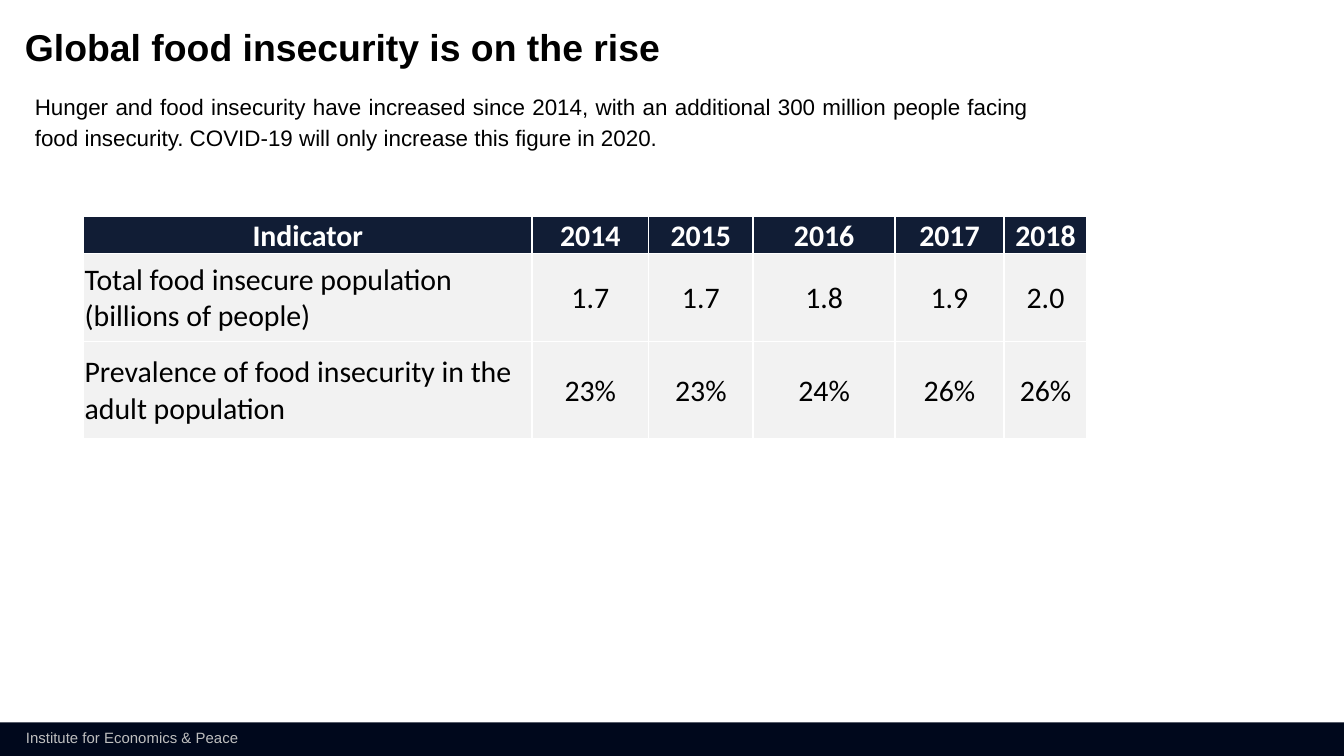
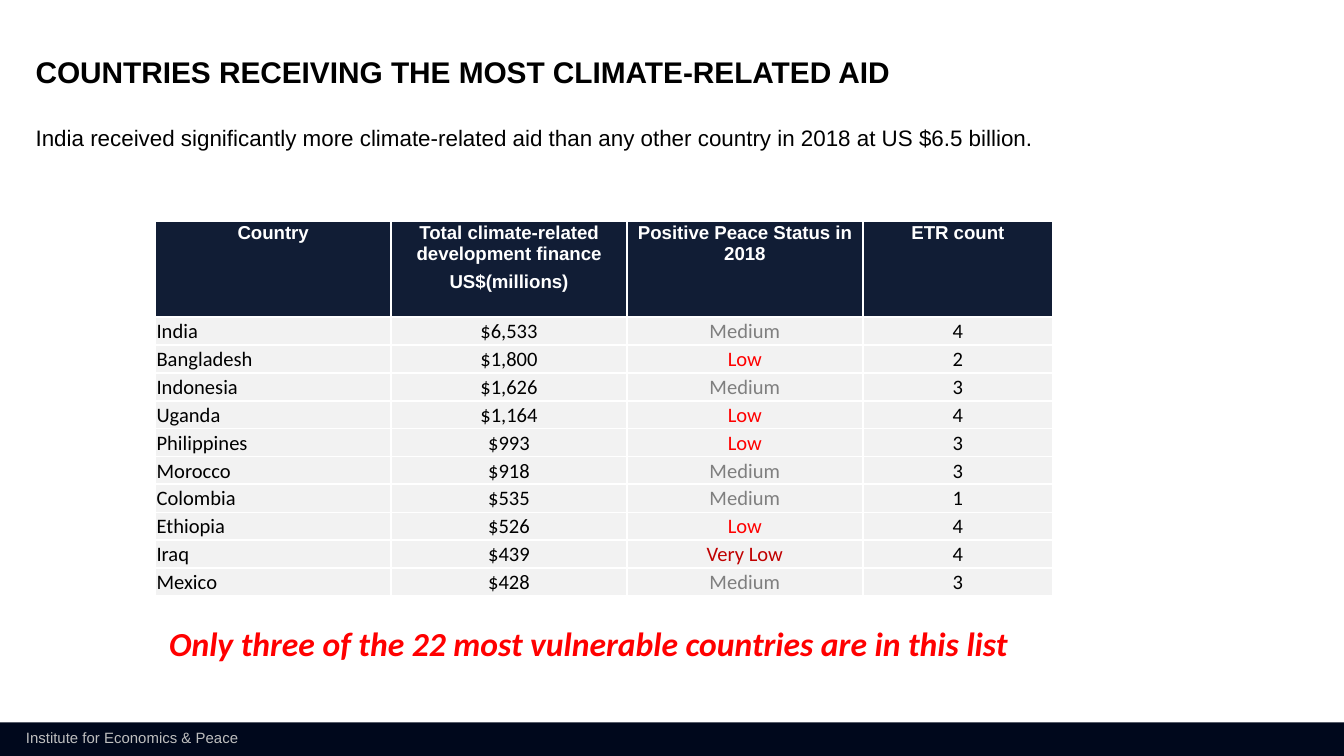
from dataclasses import dataclass

from lxml.etree import SubElement as Sub
from pptx import Presentation
from pptx.dml.color import RGBColor as Rgb
from pptx.enum.shapes import MSO_SHAPE as Form
from pptx.enum.text import MSO_ANCHOR as Anchor, PP_ALIGN as Align
from pptx.oxml.ns import qn
from pptx.slide import Slide
from pptx.table import _Cell as Cell
from pptx.text.text import TextFrame as Frame
from pptx.util import Emu, Pt

SCALE = 4572
WIDE, HIGH = 2000, 1125
BLACK, WHITE, RED = "000000", "FFFFFF", "FF0000"
NAVY, BAND, PALE, SILVER = "111D35", "00081C", "F2F2F2", "BFBFBF"
TONES = {"Medium": "7F7F7F", "Low": RED, "Very Low": "C00000"}
SIDES = ("lnL", "lnR", "lnT", "lnB")


@dataclass(frozen=True)
class Box:
    left: int
    top: int
    width: int
    height: int


@dataclass(frozen=True)
class Style:
    size: int
    face: str = "Arial"
    tone: str = BLACK
    bold: bool = False
    slant: bool = False
    align: Align = Align.LEFT
    lead: float = 1.0
    after: int = 0


@dataclass(frozen=True)
class Label:
    text: str
    box: Box
    style: Style
    pads: tuple[int, int] = (0, 0)
    wrap: bool = True


@dataclass(frozen=True)
class Grid:
    left: int
    top: int
    cols: list[int]
    rows: list[int]
    data: list[list[str]]
    head: Style
    size: int
    heads: int = 1


FOOT = Label("Institute for Economics & Peace", Box(19, 1074, 360, 48),
             Style(8, tone=SILVER), (20, 10), False)


def px(count: int) -> Emu:
    return Emu(count * SCALE)


def rgb(code: str) -> Rgb:
    return Rgb.from_string(code)


def area(box: Box) -> tuple[Emu, ...]:
    return px(box.left), px(box.top), px(box.width), px(box.height)


def write(frame: Frame, text: str, style: Style) -> None:
    frame.text = text
    para = frame.paragraphs[0]
    para.alignment = style.align
    para.line_spacing = style.lead
    para.space_after = Pt(style.after)
    font = para.font
    font.size, font.name = Pt(style.size), style.face
    font.bold, font.italic = style.bold, style.slant
    font.color.rgb = rgb(style.tone)


def fit(frame: Frame, label: Label) -> None:
    side, edge = label.pads
    frame.margin_left = frame.margin_right = px(side)
    frame.margin_top = frame.margin_bottom = px(edge)
    frame.word_wrap = label.wrap
    frame.vertical_anchor = Anchor.TOP
    write(frame, label.text, label.style)


def put(slide: Slide, label: Label) -> None:
    fit(slide.shapes.add_textbox(*area(label.box)).text_frame, label)


def name(slide: Slide, label: Label) -> None:
    title = slide.shapes.title
    title.left, title.top, title.width, title.height = area(label.box)
    fit(title.text_frame, label)


def rule(cell: Cell, gap: str) -> None:
    props = cell._tc.get_or_add_tcPr()
    for side in SIDES:
        line = Sub(props, qn(f"a:{side}"), w=str(Pt(1)))
        if side == gap:
            Sub(line, qn("a:noFill"))
        else:
            fill = Sub(line, qn("a:solidFill"))
            Sub(fill, qn("a:srgbClr"), val=WHITE)


def look(grid: Grid, row: int, col: int) -> Style:
    if row < grid.heads:
        return grid.head
    tone = TONES.get(grid.data[row][col], BLACK)
    return Style(grid.size, "Calibri", tone, align=Align.CENTER if col else Align.LEFT)


def draw(slide: Slide, grid: Grid) -> None:
    box = Box(grid.left, grid.top, sum(grid.cols), sum(grid.rows))
    table = slide.shapes.add_table(len(grid.rows), len(grid.cols), *area(box)).table
    table.first_row = table.horz_banding = False
    for col, width in zip(table.columns, grid.cols):
        col.width = px(width)
    for row, height in zip(table.rows, grid.rows):
        row.height = px(height)
    last = grid.heads - 1
    for col in range(len(grid.cols)):
        if last and not grid.data[last][col]:
            table.cell(0, col).merge(table.cell(last, col))
    for row, line in enumerate(grid.data):
        for col, text in enumerate(line):
            cell = table.cell(row, col)
            head = row < grid.heads
            cell.margin_left = cell.margin_right = cell.margin_top = px(2)
            cell.margin_bottom = 0
            cell.vertical_anchor = Anchor.TOP if head and last else Anchor.MIDDLE
            split = head and last and not (cell.is_merge_origin or cell.is_spanned)
            rule(cell, ("lnT" if row else "lnB") if split else "")
            cell.fill.solid()
            cell.fill.fore_color.rgb = rgb(NAVY if head else PALE)
            write(cell.text_frame, text, look(grid, row, col))


def start(deck: Presentation, title: Label) -> Slide:
    slide = deck.slides.add_slide(deck.slide_layouts[5])
    band = slide.shapes.add_shape(Form.RECTANGLE, *area(Box(0, 1075, WIDE, 50)))
    band.shadow.inherit = False
    band.fill.solid()
    band.fill.fore_color.rgb = rgb(BAND)
    band.line.fill.background()
    put(slide, FOOT)
    name(slide, title)
    return slide


def hunger(deck: Presentation) -> None:
    slide = start(deck, Label("Global food insecurity is on the rise",
                              Box(37, 44, 1496, 60), Style(20, bold=True, lead=0.9)))
    data = [
        ["Indicator", "2014", "2015", "2016", "2017", "2018"],
        ["Total food insecure population (billions of people)",
         "1.7", "1.7", "1.8", "1.9", "2.0"],
        ["Prevalence of food insecurity in the adult population",
         "23%", "23%", "24%", "26%", "26%"],
    ]
    head = Style(16, "Calibri", WHITE, True, align=Align.CENTER)
    cols = [668, 173, 156, 211, 162, 124]
    draw(slide, Grid(124, 322, cols, [54, 131, 145], data, head, 16))
    put(slide, Label(
        "Hunger and food insecurity have increased since 2014, with an additional "
        "300 million people facing food insecurity. COVID-19 will only increase "
        "this figure in 2020.",
        Box(36, 125, 1512, 104), Style(12, align=Align.JUSTIFY, lead=1.15, after=6),
        (16, 8)))


def aid(deck: Presentation) -> None:
    slide = start(deck, Label("COUNTRIES RECEIVING THE MOST CLIMATE-RELATED AID",
                              Box(53, 80, 1564, 60), Style(16, bold=True)))
    put(slide, Label(
        "India received significantly more climate-related aid than any other "
        "country in 2018 at US $6.5 billion.",
        Box(53, 189, 1530, 60), Style(12, lead=0.9)))
    data = [
        ["Country", "Total climate-related development finance",
         "Positive Peace Status in 2018", "ETR count"],
        ["", "US$(millions)", "", ""],
        ["India", "$6,533", "Medium", "4"],
        ["Bangladesh", "$1,800", "Low", "2"],
        ["Indonesia", "$1,626", "Medium", "3"],
        ["Uganda", "$1,164", "Low", "4"],
        ["Philippines", "$993", "Low", "3"],
        ["Morocco", "$918", "Medium", "3"],
        ["Colombia", "$535", "Medium", "1"],
        ["Ethiopia", "$526", "Low", "4"],
        ["Iraq", "$439", "Very Low", "4"],
        ["Mexico", "$428", "Medium", "3"],
    ]
    head = Style(10, tone=WHITE, bold=True, align=Align.CENTER)
    rows = [74, 67] + [42, 41] * 5
    draw(slide, Grid(231, 329, [351, 351, 351, 283], rows, data, head, 11, heads=2))
    put(slide, Label("Only three of the 22 most vulnerable countries are in this list",
                     Box(232, 917, 1304, 80), Style(18, "Calibri", RED, True, True),
                     (20, 10), False))


def main() -> None:
    deck = Presentation()
    deck.slide_width, deck.slide_height = px(WIDE), px(HIGH)
    hunger(deck)
    aid(deck)
    deck.save("out.pptx")


if __name__ == "__main__":
    main()
